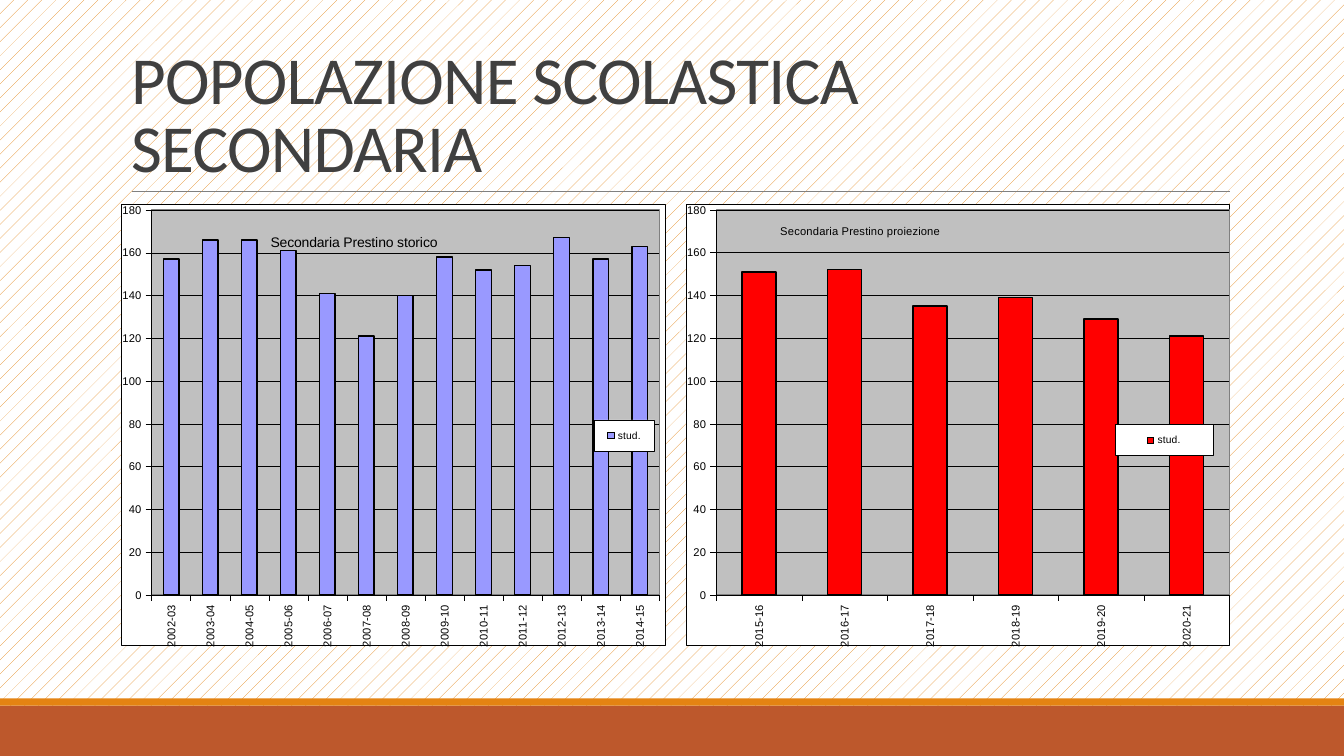
from dataclasses import dataclass

from lxml import etree
from pptx import Presentation
from pptx.chart.data import CategoryChartData
from pptx.dml.color import RGBColor
from pptx.enum.chart import XL_CHART_TYPE, XL_LEGEND_POSITION, XL_TICK_MARK
from pptx.enum.dml import MSO_PATTERN
from pptx.enum.shapes import MSO_CONNECTOR, MSO_SHAPE
from pptx.enum.text import MSO_ANCHOR, MSO_AUTO_SIZE, PP_ALIGN
from pptx.oxml import parse_xml
from pptx.oxml.ns import nsdecls, qn
from pptx.util import Inches, Pt

COLUMN = XL_CHART_TYPE.COLUMN_CLUSTERED
RIGHT = XL_LEGEND_POSITION.RIGHT
OUT = XL_TICK_MARK.OUTSIDE
NONE = XL_TICK_MARK.NONE
DOTS = MSO_PATTERN.PERCENT_5
RECT = MSO_SHAPE.RECTANGLE
LINE = MSO_CONNECTOR.STRAIGHT
BOTTOM = MSO_ANCHOR.BOTTOM
FIXED = MSO_AUTO_SIZE.NONE
LEFT = PP_ALIGN.LEFT


@dataclass(frozen=True)
class Theme:
    """Colours, fonts and type sizes of the slide."""
    rust: str = "BD582C"
    orange: str = "E48312"
    white: str = "FFFFFF"
    black: str = "000000"
    gray: str = "808080"
    silver: str = "C0C0C0"
    dark: str = "404040"
    blue: str = "9999FF"
    red: str = "FF0000"
    head: str = "Calibri"
    body: str = "Arial"
    title: float = 48
    label: float = 8
    legend: float = 7.3
    hair: float = 0.25


class Deck:
    """Holds the theme and the current slide."""

    def __init__(self, theme):
        """Open a wide slide with a title."""
        self.theme = theme
        self.file = Presentation()
        self.file.slide_width = Inches(13.33)
        self.file.slide_height = Inches(7.5)
        self.slide = self.file.slides.add_slide(self.file.slide_layouts[5])

    def ground(self):
        """Fill the background with the dotted pattern."""
        fill = self.slide.background.fill
        fill.patterned()
        fill.pattern = DOTS
        fill.fore_color.rgb = RGBColor.from_string(self.theme.orange)
        fill.back_color.rgb = RGBColor.from_string(self.theme.white)

    def font(self, font, size, color, name):
        """Set size, colour and face of a font."""
        font.size = Pt(size)
        font.name = name
        font.bold = False
        font.color.rgb = RGBColor.from_string(color)

    def stroke(self, line, color, width):
        """Set colour and width of a line."""
        line.color.rgb = RGBColor.from_string(color)
        line.width = Pt(width)

    def band(self, top, height, color):
        """Draw a full-width band."""
        box = self.slide.shapes.add_shape(
            RECT, 0, Inches(top), self.file.slide_width, Inches(height))
        box.shadow.inherit = False
        box.fill.solid()
        box.fill.fore_color.rgb = RGBColor.from_string(color)
        box.line.fill.background()

    def rule(self, left, right, top):
        """Draw the thin rule below the title."""
        line = self.slide.shapes.add_connector(
            LINE, Inches(left), Inches(top), Inches(right), Inches(top))
        self.stroke(line.line, self.theme.gray, 0.5)
        etree.SubElement(line._element.spPr, qn("a:effectLst"))

    def title(self, text, left, top, width, height):
        """Place and format the title."""
        box = self.slide.shapes.title
        box.left, box.top = Inches(left), Inches(top)
        box.width, box.height = Inches(width), Inches(height)
        frame = box.text_frame
        frame.word_wrap = True
        frame.auto_size = FIXED
        frame.vertical_anchor = BOTTOM
        para = frame.paragraphs[0]
        para.alignment = LEFT
        para.line_spacing = 0.85
        run = para.add_run()
        run.text = text
        self.font(run.font, self.theme.title, self.theme.dark, self.theme.head)
        run._r.get_or_add_rPr().set("spc", "-50")

    def place(self, node, frame):
        """Give a chart part a fixed place, as shares of the chart."""
        for old in node.findall(qn("c:layout")):
            node.remove(old)
        layout = etree.Element(qn("c:layout"))
        hand = etree.SubElement(layout, qn("c:manualLayout"))
        pairs = [("xMode", "edge"), ("yMode", "edge"), *zip("xywh", frame)]
        if node.tag == qn("c:plotArea"):
            pairs.insert(0, ("layoutTarget", "inner"))
        for key, value in pairs:
            etree.SubElement(hand, qn("c:" + key)).set("val", str(value))
        mark = node.find(qn("c:overlay"))
        if mark is None:
            node.insert(0, layout)
        else:
            mark.addprevious(layout)

    def paint(self, node, fill, line, width):
        """Fill and outline a chart part."""
        style = parse_xml(
            f'<c:spPr {nsdecls("c", "a")}>'
            f'<a:solidFill><a:srgbClr val="{fill}"/></a:solidFill>'
            f'<a:ln w="{Pt(width)}"><a:solidFill><a:srgbClr val="{line}"/>'
            '</a:solidFill></a:ln></c:spPr>')
        text = node.find(qn("c:txPr"))
        if text is None:
            node.append(style)
        else:
            text.addprevious(style)

    def axis(self, axis):
        """Format one axis."""
        look = self.theme
        axis.major_tick_mark = OUT
        axis.minor_tick_mark = NONE
        self.font(axis.tick_labels.font, look.label, look.black, look.body)
        self.stroke(axis.format.line, look.black, look.hair)

    def chart(self, left, name, size, spot, cats, vals, color, plot, key):
        """Draw one column chart with its title and legend."""
        look = self.theme
        data = CategoryChartData()
        data.categories = cats
        data.add_series("stud.", vals)
        chart = self.slide.shapes.add_chart(
            COLUMN, Inches(left), Inches(2.02), Inches(5.4), Inches(4.4),
            data).chart
        self.font(chart.font, look.label, look.black, look.body)
        run = chart.chart_title.text_frame.paragraphs[0].add_run()
        run.text = name
        self.font(run.font, size, look.black, look.body)
        self.place(chart.chart_title._element, spot)

        bars = chart.plots[0]
        bars.gap_width = 150
        bars.vary_by_categories = False
        style = bars.series[0].format
        style.fill.solid()
        style.fill.fore_color.rgb = RGBColor.from_string(color)
        self.stroke(style.line, look.black, 1)

        cat, val = chart.category_axis, chart.value_axis
        self.axis(cat)
        self.axis(val)
        turn = cat._element.find(qn("c:txPr")).find(qn("a:bodyPr"))
        turn.set("rot", "-5400000")
        turn.set("vert", "horz")
        val.minimum_scale, val.maximum_scale, val.major_unit = 0, 180, 20
        self.stroke(val.major_gridlines.format.line, look.black, look.hair)

        chart.has_legend = True
        legend = chart.legend
        legend.position = RIGHT
        legend.include_in_layout = False
        self.font(legend.font, look.legend, look.black, look.body)
        self.place(legend._element, key)
        self.paint(legend._element, look.white, look.black, look.hair)
        root = chart._chartSpace
        area = root.chart.plotArea
        self.place(area, plot)
        self.paint(area, look.silver, look.gray, 1)
        self.paint(root, look.white, look.black, look.hair)


def years(first, last):
    """List the school years from first to last."""
    return [f"{year}-{(year + 1) % 100:02d}" for year in range(first, last + 1)]


def main():
    """Build the slide and save it."""
    look = Theme()
    deck = Deck(look)
    deck.ground()
    deck.band(7, 0.5, look.rust)
    deck.band(6.93, 0.07, look.orange)
    deck.rule(1.31, 12.2, 1.9)
    deck.title("POPOLAZIONE SCOLASTICA SECONDARIA", 1.2, 0.31, 11, 1.59)
    deck.chart(1.2, "Secondaria Prestino storico", 10, (0.27, 0.06),
               years(2002, 2014),
               (157, 166, 166, 161, 141, 121, 140, 158, 152, 154, 167, 157, 163),
               look.blue, (0.056, 0.014, 0.933, 0.873), (0.87, 0.49, 0.11, 0.07))
    deck.chart(6.8, "Secondaria Prestino proiezione", 8, (0.17, 0.04),
               years(2015, 2020), (151, 152, 135, 139, 129, 121),
               look.red, (0.056, 0.014, 0.944, 0.872), (0.79, 0.5, 0.18, 0.07))
    deck.file.save("out.pptx")


if __name__ == "__main__":
    main()
